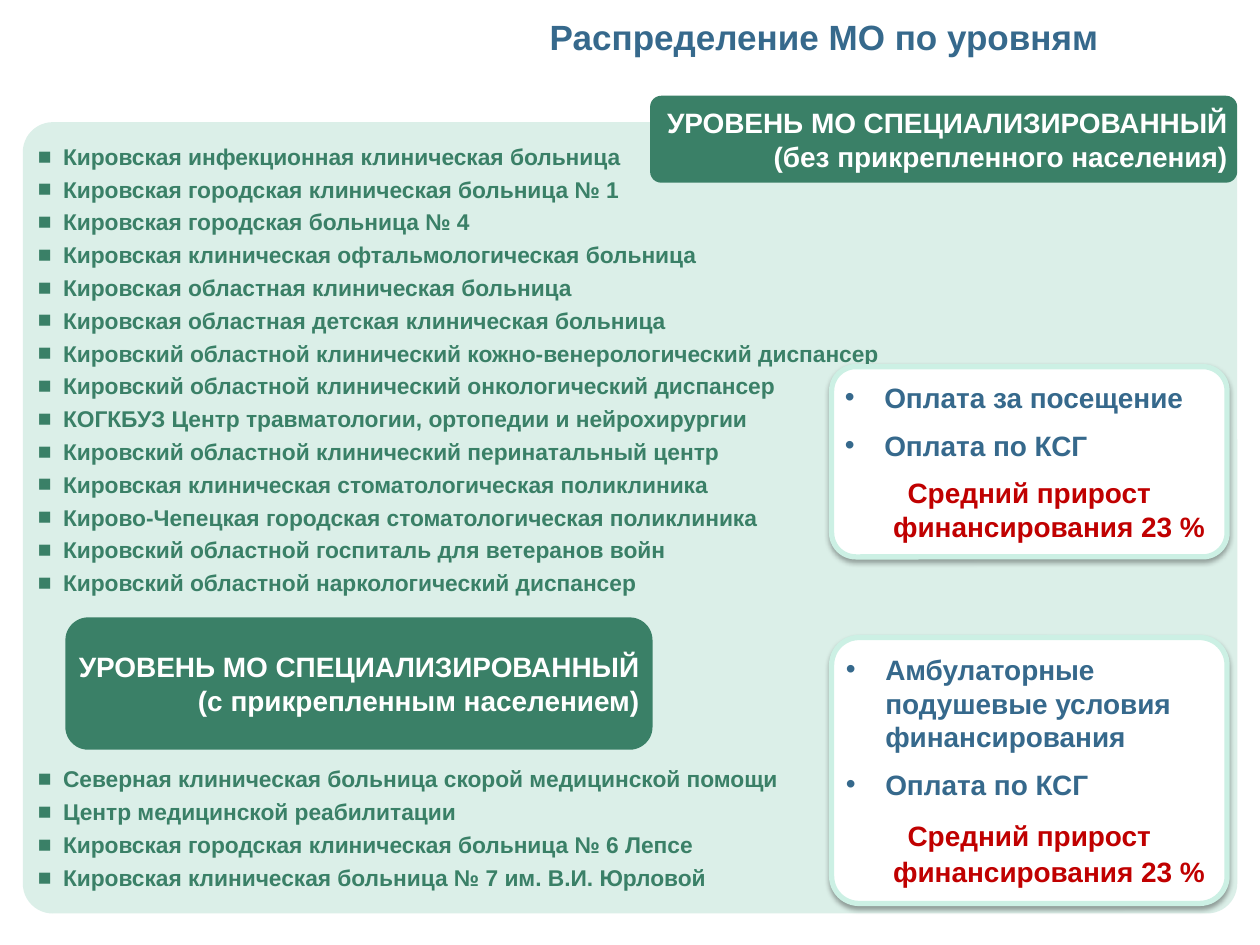
"""Builds the slide that shows medical organisations by level."""
from copy import deepcopy
from dataclasses import dataclass

from lxml import etree
from pptx import Presentation
from pptx.dml.color import RGBColor
from pptx.enum.shapes import MSO_SHAPE
from pptx.enum.text import MSO_ANCHOR, MSO_AUTO_SIZE, PP_ALIGN
from pptx.oxml.ns import qn
from pptx.util import Pt

ROUNDED = MSO_SHAPE.ROUNDED_RECTANGLE
TOP, MIDDLE = MSO_ANCHOR.TOP, MSO_ANCHOR.MIDDLE
LEFT, CENTER, RIGHT = PP_ALIGN.LEFT, PP_ALIGN.CENTER, PP_ALIGN.RIGHT
GROW = MSO_AUTO_SIZE.SHAPE_TO_FIT_TEXT


@dataclass(frozen=True)
class Theme:
    font: str = "Arial"
    green: str = "3A8067"
    pale: str = "DBEFE8"
    mint: str = "CCF0E4"
    blue: str = "36698C"
    red: str = "C00000"
    white: str = "FFFFFF"
    black: str = "000000"
    title_size: int = 20
    label_size: int = 16
    list_size: int = 13


THEME = Theme()
SPECIALISED = [
    "Кировская инфекционная клиническая больница",
    "Кировская городская клиническая больница № 1",
    "Кировская городская больница № 4",
    "Кировская клиническая офтальмологическая больница",
    "Кировская областная клиническая больница",
    "Кировская областная детская клиническая больница",
    "Кировский областной клинический кожно-венерологический диспансер",
    "Кировский областной клинический онкологический диспансер",
    "КОГКБУЗ Центр травматологии, ортопедии и нейрохирургии",
    "Кировский областной клинический перинатальный центр",
    "Кировская клиническая стоматологическая поликлиника",
    "Кирово-Чепецкая городская стоматологическая поликлиника",
    "Кировский областной госпиталь для ветеранов войн",
    "Кировский областной наркологический диспансер",
]
WITH_POPULATION = [
    "Северная клиническая больница скорой медицинской помощи",
    "Центр медицинской реабилитации",
    "Кировская городская клиническая больница № 6 Лепсе",
    "Кировская клиническая больница № 7 им. В.И. Юрловой",
]
GROWTH = "Средний прирост финансирования 23 %"


def write(frame, text, *, size, color, align=LEFT, indent=0, bullet=None,
          before=0, spacing=None):
    first = not frame.paragraphs[0].runs
    para = frame.paragraphs[0] if first else frame.add_paragraph()
    para.text = text
    para.alignment = align
    if before:
        para.space_before = Pt(before)
    if spacing:
        para.line_spacing = spacing
    properties = para._p.get_or_add_pPr()
    if indent:
        properties.set("marL", str(Pt(indent)))
        properties.set("indent", str(-Pt(indent)))
    if bullet:
        tint = etree.SubElement(properties, qn("a:buClr"))
        etree.SubElement(tint, qn("a:srgbClr"), val=color)
        etree.SubElement(properties, qn("a:buFont"), typeface=THEME.font)
        etree.SubElement(properties, qn("a:buChar"), char=bullet)
    for span in para.runs:
        span.font.name = THEME.font
        span.font.size = Pt(size)
        span.font.bold = True
        span.font.color.rgb = RGBColor.from_string(color)
    for line_break in para._p.findall(qn("a:br")):
        line_break.append(deepcopy(para.runs[0]._r.rPr))


class Page:
    """Holds the theme and the slide that is being filled."""

    def __init__(self, slide, theme):
        self.slide = slide
        self.theme = theme

    def rounded(self, area, radius, fill, anchor):
        box = self.slide.shapes.add_shape(ROUNDED, *map(Pt, area))
        box.adjustments[0] = radius
        box.shadow.inherit = False
        box.fill.solid()
        box.fill.fore_color.rgb = RGBColor.from_string(fill)
        box.line.fill.background()
        frame = box.text_frame
        frame.word_wrap = True
        frame.vertical_anchor = anchor
        frame.margin_left = frame.margin_right = Pt(3.6)
        frame.margin_top = frame.margin_bottom = Pt(3.6)
        return box

    def panel(self, area, groups, gap):
        box = self.rounded(area, 0.038, self.theme.pale, TOP)
        for group_index, names in enumerate(groups):
            for index, name in enumerate(names):
                before = gap if group_index and not index else 0
                write(box.text_frame, name, size=self.theme.list_size,
                      color=self.theme.green, indent=14.4, bullet="■",
                      before=before, spacing=1.2)

    def heading(self, area, radius, text):
        box = self.rounded(area, radius, self.theme.green, MIDDLE)
        box.text_frame.auto_size = GROW
        write(box.text_frame, text, size=self.theme.label_size,
              color=self.theme.white, align=RIGHT)

    def card(self, area, radius, items, result, spacing=None):
        box = self.rounded(area, radius, self.theme.white, MIDDLE)
        box.line.color.rgb = RGBColor.from_string(self.theme.mint)
        box.line.width = Pt(3)
        self.drop_shadow(box)
        box.text_frame.auto_size = GROW
        for index, item in enumerate(items):
            write(box.text_frame, item, size=self.theme.label_size,
                  color=self.theme.blue, indent=22.5, bullet="•",
                  before=8 if index else 0)
        write(box.text_frame, result, size=self.theme.label_size,
              color=self.theme.red, align=CENTER, indent=22.5,
              before=8, spacing=spacing)

    def drop_shadow(self, box):
        effects = box._element.spPr.find(qn("a:effectLst"))
        shadow = etree.SubElement(
            effects, qn("a:outerShdw"), blurRad=str(Pt(3)), dist=str(Pt(1.8)),
            dir="5400000", algn="t", rotWithShape="0")
        tint = etree.SubElement(shadow, qn("a:srgbClr"), val=self.theme.black)
        etree.SubElement(tint, qn("a:alpha"), val="35000")

    def title(self, area, text):
        box = self.slide.shapes.add_textbox(*map(Pt, area))
        box.text_frame.word_wrap = True
        box.text_frame.auto_size = GROW
        write(box.text_frame, text, size=self.theme.title_size,
              color=self.theme.blue, align=CENTER, indent=14.4, spacing=1.5)


def main():
    deck = Presentation()
    deck.slide_width, deck.slide_height = Pt(720), Pt(540)
    page = Page(deck.slides.add_slide(deck.slide_layouts[6]), THEME)
    page.panel((13, 69.8, 694, 452.2), [SPECIALISED, WITH_POPULATION], gap=93.5)
    page.card((475.2, 364.3, 226, 152), 0.103,
              ["Амбулаторные подушевые условия финансирования", "Оплата по КСГ"],
              GROWTH, spacing=Pt(21))
    page.heading((371.5, 54.7, 335.5, 49.7), 0.128,
                 "УРОВЕНЬ МО СПЕЦИАЛИЗИРОВАННЫЙ\v(без прикрепленного населения)")
    page.card((475.2, 209.5, 226, 108.7), 0.127,
              ["Оплата за посещение", "Оплата по КСГ"], GROWTH)
    page.title((244.8, -6.5, 452.2, 43.2), "Распределение МО по уровням")
    page.heading((37.4, 352.8, 335.5, 75.6), 0.172,
                 "УРОВЕНЬ МО СПЕЦИАЛИЗИРОВАННЫЙ\v(с прикрепленным населением)")
    deck.save("out.pptx")


if __name__ == "__main__":
    main()
